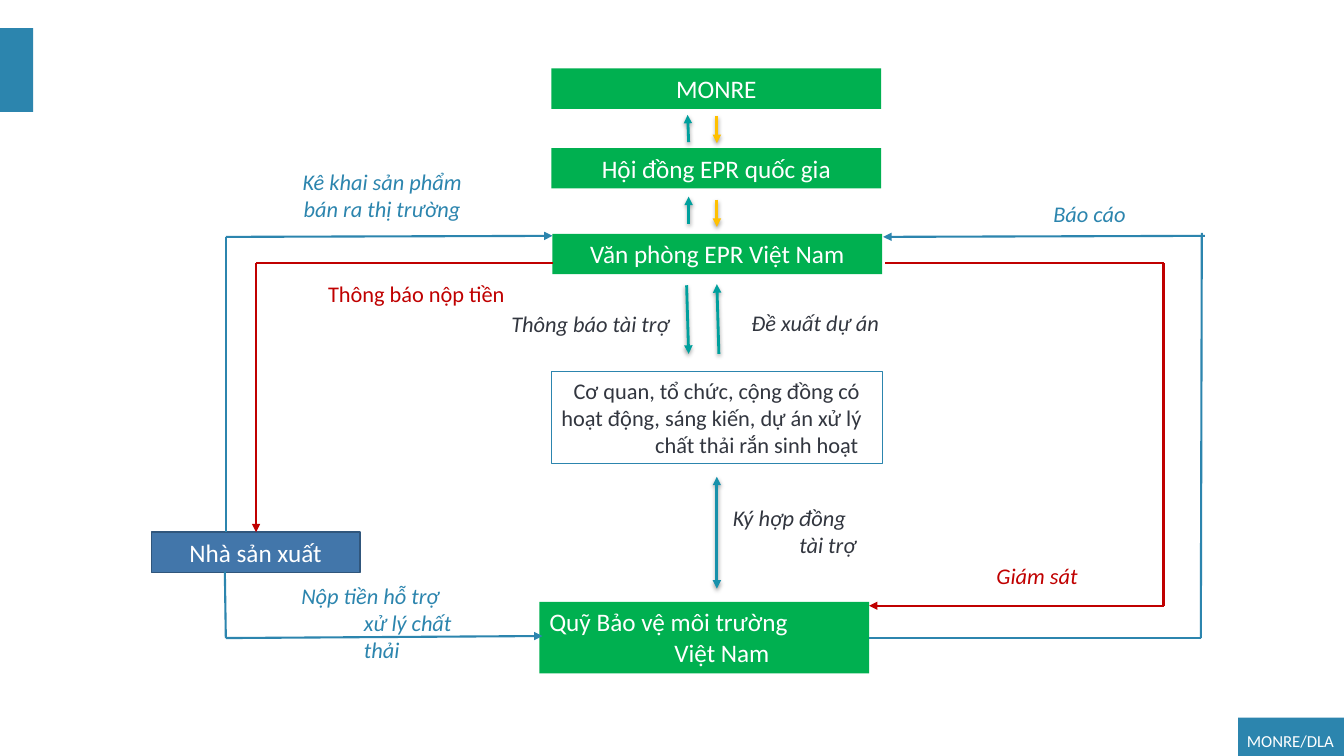
"""Build the slide showing how the Vietnamese EPR system works."""
from itertools import pairwise

from lxml.etree import SubElement
from pptx import Presentation
from pptx.dml.color import RGBColor
from pptx.enum.shapes import MSO_CONNECTOR as Connector, MSO_SHAPE as Shape
from pptx.enum.text import MSO_ANCHOR as Anchor, PP_ALIGN as Align
from pptx.oxml.ns import qn
from pptx.util import Inches, Pt

COLORS = {
    "blue": "2C85AE", "green": "00B050", "steel": "4276AA", "navy": "30567C",
    "red": "C00000", "teal": "00A09D", "amber": "FFC000", "cyan": "1891AB",
    "dark": "32363F", "white": "FFFFFF", "black": "000000",
}


def write(box, lines, size=16, color="dark", italic=False, align=Align.CENTER,
          anchor=Anchor.TOP):
    """Fill box with lines; a (text, indent) pair is set flush left."""
    frame = box.text_frame
    frame.word_wrap = True
    frame.vertical_anchor = anchor
    for number, line in enumerate(lines):
        para = frame.add_paragraph() if number else frame.paragraphs[0]
        para.alignment = align
        if isinstance(line, tuple):
            line, indent = line
            para.alignment = Align.LEFT
            para._p.get_or_add_pPr().set("marL", str(Inches(indent)))
        span = para.add_run()
        span.text = line
        span.font.name = "Calibri"
        span.font.size = Pt(size)
        span.font.italic = italic
        span.font.color.rgb = RGBColor.from_string(COLORS[color])


def connect(start, end, color, width=1.5, ends=(), shadow=False):
    """Draw a straight line with triangles at the named ends."""
    line = page.shapes.add_connector(Connector.STRAIGHT, *map(Inches, start + end))
    line.line.width = Pt(width)
    line.line.color.rgb = RGBColor.from_string(COLORS[color])
    properties = line._element.spPr
    for name in ends:
        SubElement(properties.find(qn("a:ln")), qn(f"a:{name}")).set("type", "triangle")
    effects = SubElement(properties, qn("a:effectLst"))
    if shadow:
        outer = SubElement(effects, qn("a:outerShdw"), blurRad=str(Pt(3.1)),
                           dist=str(Pt(1.6)), dir="5400000", rotWithShape="0")
        black = SubElement(outer, qn("a:srgbClr"), val=COLORS["black"])
        SubElement(black, qn("a:alpha"), val="38000")


deck = Presentation()
deck.slide_width, deck.slide_height = Inches(13.33), Inches(7.5)
page = deck.slides.add_slide(deck.slide_layouts[6])

boxes = [
    ((12.28, 7.12, 1.05, 0.38), "blue", None, 0, [], 18, "white"),
    ((0, 0.28, 0.33, 0.83), "blue", None, 0, [], 18, "white"),
    ((5.47, 0.68, 3.27, 0.4), "green", None, 0, ["MONRE"], 18, "white"),
    ((5.47, 1.47, 3.27, 0.4), "green", None, 0, ["Hội đồng EPR quốc gia"], 18, "white"),
    ((5.48, 2.32, 3.27, 0.4), "green", None, 0, ["Văn phòng EPR Việt Nam"], 18, "white"),
    ((1.5, 5.28, 2.07, 0.4), "steel", "navy", 1, ["Nhà sản xuất"], 18, "white"),
    ((5.35, 5.97, 3.27, 0.71), "green", None, 0,
     [("Quỹ Bảo vệ môi trường", 0), ("Việt Nam", 1.24)], 18, "white"),
    ((5.47, 3.69, 3.28, 0.91), None, "blue", 0.75,
     [("Cơ quan, tổ chức, cộng đồng có", 0.12), ("hoạt động, sáng kiến, dự án xử lý", 0),
      ("chất thải rắn sinh hoạt", 0.93)], 16, "dark"),
]
for place, fill, outline, width, lines, size, color in boxes:
    box = page.shapes.add_shape(Shape.RECTANGLE, *map(Inches, place))
    box.shadow.inherit = False
    if fill:
        box.fill.solid()
        box.fill.fore_color.rgb = RGBColor.from_string(COLORS[fill])
    else:
        box.fill.background()
    if outline:
        box.line.color.rgb = RGBColor.from_string(COLORS[outline])
        box.line.width = Pt(width)
    else:
        box.line.fill.background()
    if lines:
        write(box, lines, size=size, color=color)

routes = [
    ("blue", [(8.62, 6.33), (11.91, 6.33), (11.92, 2.31)], False),
    ("blue", [(11.95, 2.34), (8.76, 2.35)], True),
    ("red", [(5.48, 2.61), (2.54, 2.61), (2.54, 5.28)], True),
    ("blue", [(2.24, 5.28), (2.24, 2.35), (5.48, 2.34)], True),
    ("red", [(8.78, 2.61), (11.54, 2.61), (11.54, 6.01), (8.62, 6.01)], True),
    ("blue", [(2.23, 5.67), (2.24, 6.33), (5.38, 6.31)], True),
]
for color, points, pointed in routes:
    for start, end in pairwise(points):
        connect(start, end, color, ends=["tailEnd"] if pointed and end == points[-1] else [])

arrows = [
    ((7.11, 1.15), (7.11, 1.42), "amber", ["tailEnd"]),
    ((7.11, 1.98), (7.11, 2.25), "amber", ["tailEnd"]),
    ((6.83, 1.41), (6.82, 1.14), "teal", ["tailEnd"]),
    ((6.83, 2.22), (6.83, 1.95), "teal", ["tailEnd"]),
    ((6.81, 2.83), (6.83, 3.51), "teal", ["tailEnd"]),
    ((7.13, 3.51), (7.11, 2.82), "teal", ["tailEnd"]),
    ((7.11, 4.73), (7.11, 5.84), "cyan", ["headEnd", "tailEnd"]),
]
for start, end, color, ends in arrows:
    connect(start, end, color, width=2, ends=ends, shadow=True)

labels = [
    ((9.88, 1.94, 1.85, 0.37), ["Báo cáo"], {"color": "blue", "italic": True}),
    ((2.89, 5.73, 1.78, 0.64), [("Nộp tiền hỗ trợ", 0), ("xử lý chất thải", 0.62)],
     {"color": "blue", "italic": True}),
    ((2.11, 1.62, 3.36, 0.64), ["Kê khai sản phẩm", "bán ra thị trường"],
     {"color": "blue", "italic": True}),
    ((2.91, 2.73, 2.44, 0.37), ["Thông báo nộp tiền"], {"color": "red"}),
    ((9.36, 5.53, 1.85, 0.37), ["Giám sát"], {"color": "red", "italic": True}),
    ((7.17, 4.95, 1.81, 0.64), [("Ký hợp đồng", 0), ("tài trợ", 0.66)], {"italic": True}),
    ((7.18, 3.02, 1.81, 0.37), ["Đề xuất dự án"], {"italic": True}),
    ((4.95, 3.03, 1.81, 0.37), ["Thông báo tài trợ"], {"italic": True}),
    ((12.19, 7.2, 1.14, 0.29), ["MONRE/DLA"],
     {"size": 12, "color": "white", "align": Align.RIGHT, "anchor": Anchor.MIDDLE}),
]
for place, lines, style in labels:
    write(page.shapes.add_textbox(*map(Inches, place)), lines, **style)

deck.save("out.pptx")
